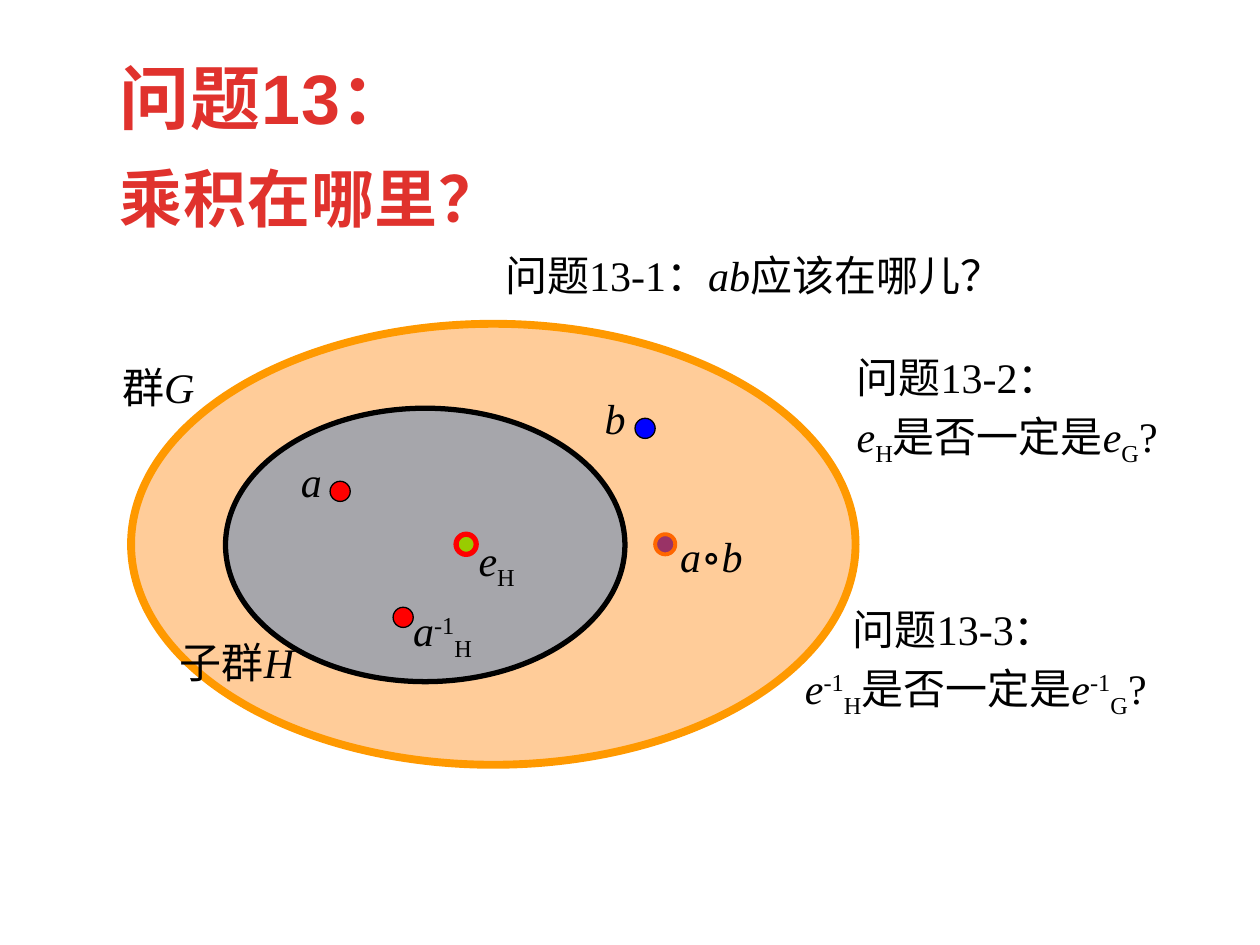
from lxml import etree
from pptx import Presentation
from pptx.dml.color import RGBColor
from pptx.enum.shapes import MSO_SHAPE
from pptx.enum.text import MSO_ANCHOR, MSO_AUTO_SIZE, PP_ALIGN
from pptx.oxml.ns import qn
from pptx.util import Inches, Pt

OVAL = MSO_SHAPE.OVAL
TOP = MSO_ANCHOR.TOP
LEFT = PP_ALIGN.LEFT
NO_FIT = MSO_AUTO_SIZE.NONE
TITLE_ONLY = 5
DOT = 0.16
SHIFT = {"sub": "-25000", "sup": "30000"}
COLORS = {
    "title": "E0322D", "ink": "000000",
    "group": "FFCC99", "rim": "FF9900", "inner": "4F81BD",
    "red": "FF0000", "blue": "0000FF", "green": "99CC00",
    "plum": "993366", "orange": "FF6600",
}


def color(name):
    return RGBColor.from_string(COLORS[name])


class Board:
    """Holds the text style and the current slide."""

    def __init__(self, slide, font="Times New Roman", size=24):
        self.slide = slide
        self.font = font
        self.size = size

    def title(self, box, lines, sizes):
        shape = self.slide.shapes.title
        shape.left, shape.top, shape.width, shape.height = map(Inches, box)
        frame = shape.text_frame
        frame.text = "\n".join(lines)
        frame.word_wrap = False
        frame.auto_size = NO_FIT
        frame.vertical_anchor = TOP
        for para, size in zip(frame.paragraphs, sizes):
            para.alignment = LEFT
            for run in para.runs:
                run.font.name = "Arial"
                run.font.size = Pt(size)
                run.font.bold = True
                run.font.color.rgb = color("title")
                run.font._element.set("spc", "50")
        frame.paragraphs[1].space_before = Pt(12)

    def oval(self, box, fill, line, width, alpha=None):
        shape = self.slide.shapes.add_shape(OVAL, *map(Inches, box))
        shape.shadow.inherit = False
        shape.fill.solid()
        shape.fill.fore_color.rgb = color(fill)
        shape.line.color.rgb = color(line)
        shape.line.width = Pt(width)
        if alpha:
            tint = shape._element.spPr.find(qn("a:solidFill"))[0]
            etree.SubElement(tint, qn("a:alpha")).set("val", str(alpha * 1000))

    def dot(self, left, top, fill, line="ink", width=0.75):
        self.oval((left, top, DOT, DOT), fill, line, width)

    def text(self, box, *lines, indent=0):
        """Each line is a list of (text, style); indent moves the first line."""
        frame = self.slide.shapes.add_textbox(*map(Inches, box)).text_frame
        frame.word_wrap = True
        for row, parts in enumerate(lines):
            para = frame.add_paragraph() if row else frame.paragraphs[0]
            if row:
                para.space_before = Pt(0.2 * self.size)
            elif indent:
                para._p.get_or_add_pPr().set("marL", str(Inches(indent)))
            for words, style in parts:
                run = para.add_run()
                run.text = words
                run.font.name = self.font
                run.font.size = Pt(self.size)
                run.font.italic = style == "i"
                run.font.color.rgb = color("ink")
                if style in SHIFT:
                    run.font._element.set("baseline", SHIFT[style])


def unit(owner, power=None):
    """Runs for the identity e of a group, with an optional power."""
    return [("e", "i")] + ([(power, "sup")] if power else []) + [(owner, "sub")]


def ask(power=None):
    return unit("H", power) + [("是否一定是", "")] + unit("G", power) + [("?", "")]


def main():
    deck = Presentation()
    deck.slide_width, deck.slide_height = Inches(10), Inches(7.5)
    board = Board(deck.slides.add_slide(deck.slide_layouts[TITLE_ONLY]))
    board.title((0.85, 0.38, 3.28, 1.55), ["问题13：", "乘积在哪里？"], [40, 36])

    # The group and its subgroup
    board.oval((1.04, 2.57, 5.75, 3.5), "group", "rim", 4.5)
    board.text((0.87, 2.82, 1.75, 0.5), [("群", ""), ("G", "i")])
    board.oval((1.79, 3.24, 3.17, 2.17), "inner", "ink", 3, alpha=50)
    board.text((1.33, 5, 1.28, 0.5), [("子群", ""), ("H", "i")])

    # Elements
    board.dot(2.62, 3.82, "red")
    board.text((2.29, 3.57, 0.42, 0.5), [("a", "i")])
    board.dot(5.04, 3.32, "blue")
    board.text((4.7, 3.07, 0.42, 0.5), [("b", "i")])
    board.dot(3.62, 4.24, "green", "red", 3)
    board.text((3.7, 4.19, 1.17, 0.5), unit("H"))
    board.dot(3.12, 4.82, "red")
    board.text((3.18, 4.75, 1.25, 0.5), [("a", "i"), ("-1", "sup"), ("H", "sub")])
    board.dot(5.2, 4.24, "plum", "orange", 2.25)
    board.text((5.3, 4.16, 0.83, 0.5), [("a", "i"), ("∘", ""), ("b", "i")])

    # Questions
    board.text((3.91, 1.93, 5.08, 0.5),
               [("问题13-1：", ""), ("ab", "i"), ("应该在哪儿？", "")])
    board.text((6.7, 2.74, 2.75, 0.99), [("问题13-2：", "")], ask())
    board.text((6.29, 4.74, 3.08, 0.99), [("问题13-3：", "")], ask("-1"), indent=0.38)

    deck.save("out.pptx")


if __name__ == "__main__":
    main()
